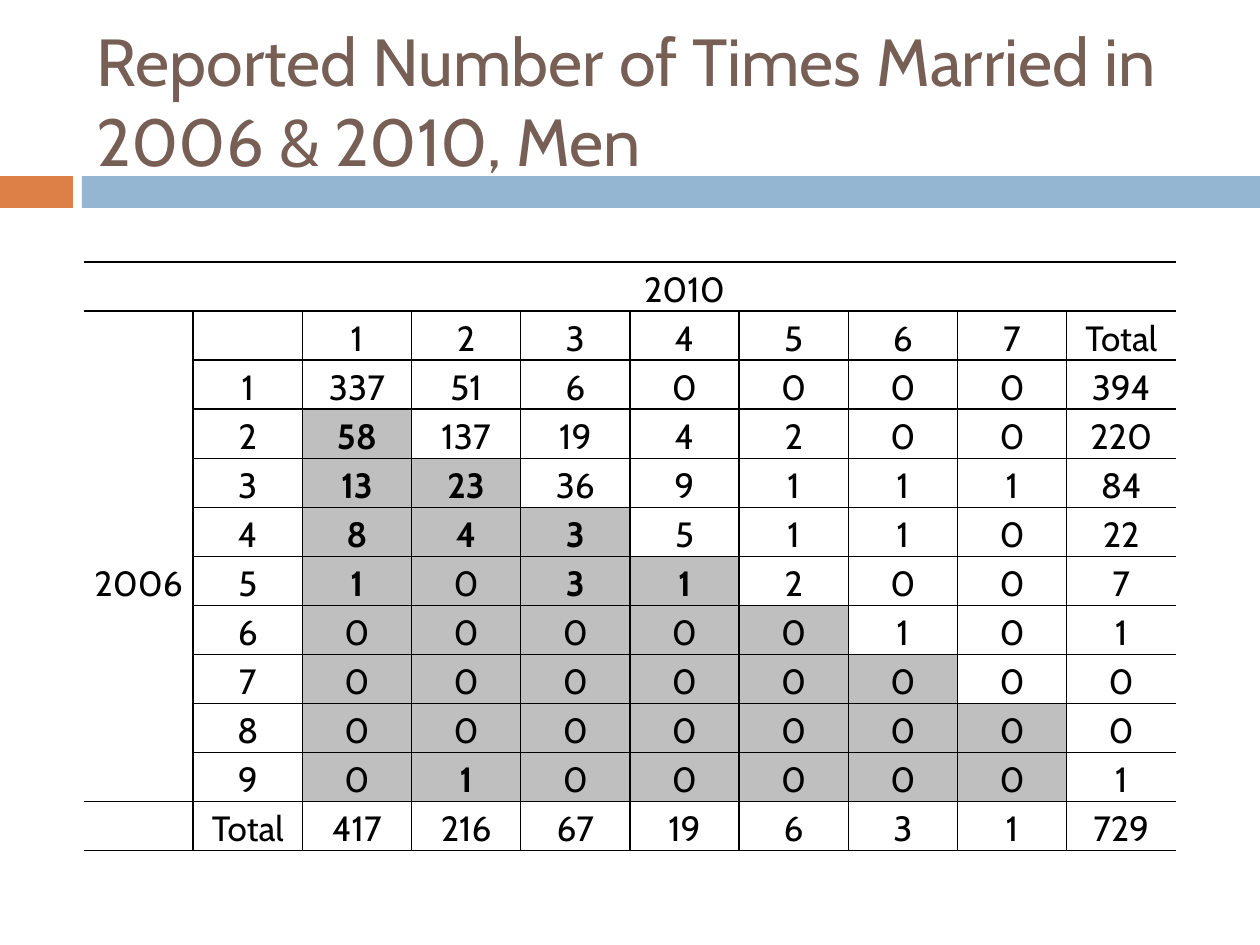
from lxml.etree import SubElement
from pptx import Presentation
from pptx.dml.color import RGBColor
from pptx.enum.shapes import MSO_SHAPE as Shape
from pptx.enum.text import MSO_ANCHOR as Anchor, MSO_AUTO_SIZE as AutoSize, PP_ALIGN as Align
from pptx.oxml.ns import qn
from pptx.util import Emu, Pt

PX_PER_INCH = 126
BROWN = RGBColor(0x77, 0x5F, 0x55)
ORANGE = RGBColor(0xDD, 0x80, 0x47)
BLUE = RGBColor(0x94, 0xB6, 0xD2)
BLACK = RGBColor(0, 0, 0)
WHITE = RGBColor(0xFF, 0xFF, 0xFF)
GREY = RGBColor(0xBF, 0xBF, 0xBF)

# Men by times married reported in 2006 (rows 1-9) and in 2010 (columns 1-7)
COUNTS = [
    [337, 51, 6, 0, 0, 0, 0],
    [58, 137, 19, 4, 2, 0, 0],
    [13, 23, 36, 9, 1, 1, 1],
    [8, 4, 3, 5, 1, 1, 0],
    [1, 0, 3, 1, 2, 0, 0],
    [0, 0, 0, 0, 0, 1, 0],
    [0, 0, 0, 0, 0, 0, 0],
    [0, 0, 0, 0, 0, 0, 0],
    [0, 1, 0, 0, 0, 0, 0],
]


def px(length):
    return Emu(round(length * 914400 / PX_PER_INCH))


def write(frame, text, size=20, color=BLACK, bold=False, align=Align.CENTER, spacing=None):
    paragraph = frame.paragraphs[0]
    paragraph.alignment = align
    paragraph.line_spacing = spacing
    run = paragraph.add_run()
    run.text = str(text)
    font = run.font
    font.name, font.size, font.bold = "Cabin", Pt(size), bold
    font.color.rgb = color


def set_borders(cell, visible):
    """Draw the sides named in visible (from "LRTB") and clear the others."""
    properties = cell._tc.get_or_add_tcPr()
    for side in "LRTB":
        line = SubElement(properties, qn(f"a:ln{side}"), w=str(Pt(1)))
        if side in visible:
            fill = SubElement(line, qn("a:solidFill"))
            SubElement(fill, qn("a:srgbClr"), val=str(BLACK))
        else:
            SubElement(line, qn("a:noFill"))


class SlideBuilder:
    def __init__(self, presentation):
        self.slide = presentation.slides.add_slide(presentation.slide_layouts[5])

    def title(self, text, left, top, width, height):
        title = self.slide.shapes.title
        title.left, title.top, title.width, title.height = map(px, (left, top, width, height))
        frame = title.text_frame
        frame.word_wrap = True
        frame.auto_size = AutoSize.NONE
        frame.vertical_anchor = Anchor.MIDDLE
        write(frame, text, size=38, color=BROWN, align=Align.LEFT)

    def band(self, left, width, color):
        band = self.slide.shapes.add_shape(Shape.RECTANGLE, px(left), px(176), px(width), px(32))
        band.shadow.inherit = False
        band.fill.solid()
        band.fill.fore_color.rgb = color
        band.line.fill.background()

    def table(self, rows, columns, left, top, width, height):
        table = self.slide.shapes.add_table(
            rows, columns, px(left), px(top), px(width), px(height)).table
        table.first_row = table.horz_banding = False
        return table

    def cell(self, cell, text, borders, fill=WHITE, bold=False):
        cell.margin_left = cell.margin_right = px(9)
        cell.margin_top = cell.margin_bottom = 0
        set_borders(cell, borders)
        cell.fill.solid()
        cell.fill.fore_color.rgb = fill
        if text != "":
            write(cell.text_frame, text, bold=bold, spacing=1.15)


def crosstab_rows():
    """Return all table rows: year heading, column labels, counts and totals."""
    with_totals = [row + [sum(row)] for row in COUNTS]
    column_totals = [sum(column) for column in zip(*with_totals)]
    labels = list(range(1, len(COUNTS[0]) + 1)) + ["Total"]
    body = [["", times] + row for times, row in enumerate(with_totals, 1)]
    body[0][0] = "2006"
    heading = ["", "", "2010"] + [""] * 7
    return [heading, ["", ""] + labels, *body, ["", "Total"] + column_totals]


def cell_borders(row, column, last_row, last_column):
    sides = ""
    if row > 0:
        sides += "L" if column > 0 else ""
        sides += "R" if column < last_column else ""
    # The year column stays open between the label row and the last count row
    open_rows = range(1, last_row) if column == 0 else ()
    sides += "T" if row not in open_rows or row == 1 else ""
    sides += "B" if row not in open_rows or row in (2, last_row - 1) else ""
    return sides


def add_crosstab(builder):
    rows = crosstab_rows()
    last_row, last_column = len(rows) - 1, len(rows[0]) - 1
    table = builder.table(len(rows), len(rows[0]), 84, 262, 1092, 580)
    for r, values in enumerate(rows):
        for c, value in enumerate(values):
            fewer_in_2010 = 2 <= r < last_row and 2 <= c < last_column and c < r
            builder.cell(table.cell(r, c), value,
                         cell_borders(r, c, last_row, last_column),
                         fill=GREY if fewer_in_2010 else WHITE,
                         bold=fewer_in_2010 and value > 0)
    table.cell(0, 2).merge(table.cell(0, last_column - 1))
    year_2006 = table.cell(2, 0)
    year_2006.merge(table.cell(last_row - 1, 0))
    year_2006.vertical_anchor = Anchor.MIDDLE


def main():
    presentation = Presentation()
    presentation.slide_width, presentation.slide_height = px(1260), px(945)
    builder = SlideBuilder(presentation)
    builder.band(0, 73, ORANGE)
    builder.band(82, 1178, BLUE)
    builder.title("Reported Number of Times Married in 2006 & 2010, Men", 84, 32, 1124, 136)
    add_crosstab(builder)
    presentation.save("out.pptx")


if __name__ == "__main__":
    main()
